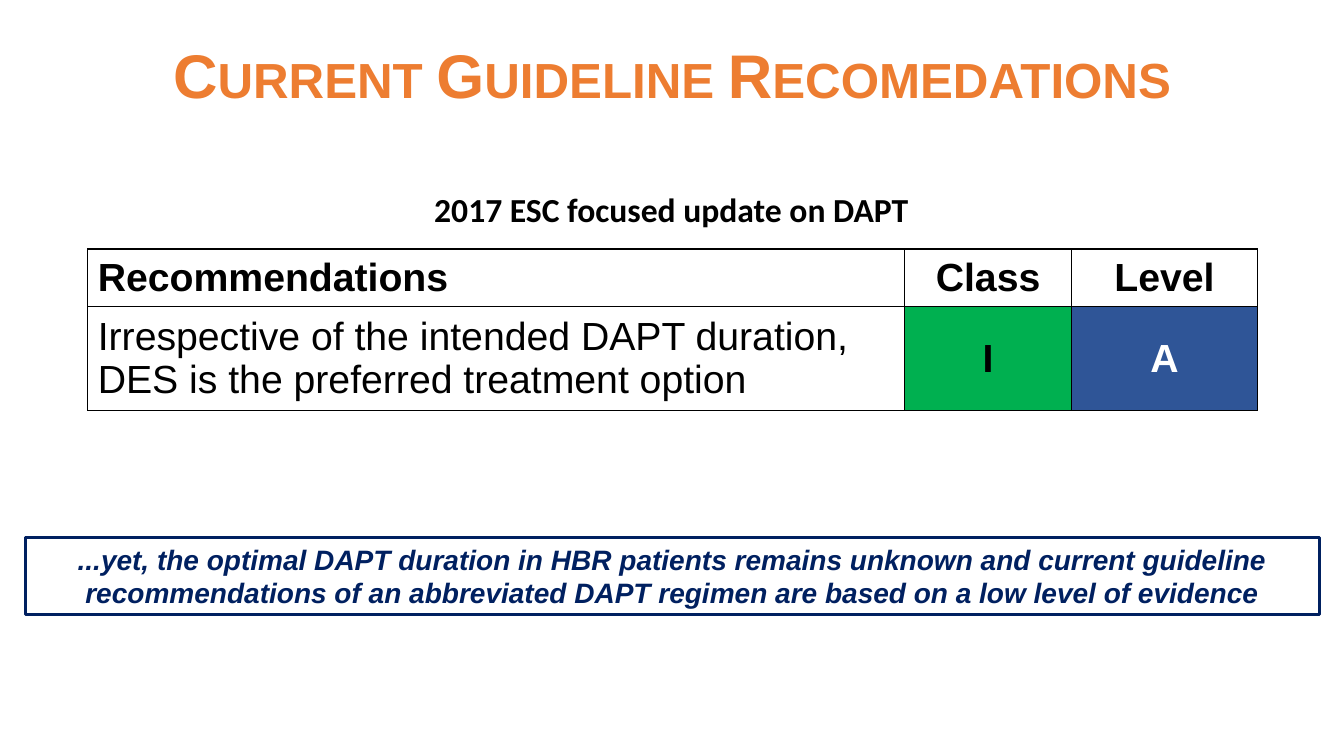
from collections import namedtuple

from lxml.etree import SubElement
from pptx import Presentation
from pptx.dml.color import RGBColor
from pptx.enum.shapes import MSO_SHAPE
from pptx.enum.text import MSO_ANCHOR, PP_ALIGN
from pptx.oxml.ns import qn
from pptx.util import Inches, Pt

WIDTH, HEIGHT = Inches(13.33), Inches(7.5)
BLACK = RGBColor(0x00, 0x00, 0x00)
WHITE = RGBColor(0xFF, 0xFF, 0xFF)
ORANGE = RGBColor(0xED, 0x7D, 0x31)
NAVY = RGBColor(0x00, 0x20, 0x60)
GREEN = RGBColor(0x00, 0xB0, 0x50)
BLUE = RGBColor(0x2F, 0x55, 0x97)

COLUMN_WEIGHTS = (8.1, 1.66, 1.84)
ROW_WEIGHTS = (0.57, 1.03)

Box = namedtuple("Box", "left top width height")
Cell = namedtuple("Cell", "text bold color fill", defaults=(True, BLACK, WHITE))

RECOMMENDATIONS = (
    (Cell("Recommendations"), Cell("Class"), Cell("Level")),
    (
        Cell("Irrespective of the intended DAPT duration, "
             "DES is the preferred treatment option", bold=False),
        Cell("I", fill=GREEN),
        Cell("A", color=WHITE, fill=BLUE),
    ),
)


def percent_box(left, top, width, height):
    """Turn percentages of the slide's width and height into lengths."""
    return Box(int(WIDTH * left / 100), int(HEIGHT * top / 100),
               int(WIDTH * width / 100), int(HEIGHT * height / 100))


def write(frame, text, size, color, font="Arial", bold=True, italic=False,
          align=PP_ALIGN.CENTER):
    frame.word_wrap = True
    para = frame.paragraphs[0]
    para.alignment = align
    span = para.add_run()
    span.text = text
    span.font.name = font
    span.font.size = Pt(size)
    span.font.bold = bold
    span.font.italic = italic
    span.font.color.rgb = color
    return span


def add_title(page, box):
    frame = page.shapes.add_textbox(*box).text_frame
    span = write(frame, "Current Guideline Recomedations", 44, ORANGE)
    span.font._element.set("cap", "small")
    frame.paragraphs[0].line_spacing = 0.9


def add_caption(page, box):
    frame = page.shapes.add_textbox(*box).text_frame
    write(frame, "2017 ESC focused update on DAPT", 24, BLACK, font="Calibri")


def add_borders(cell):
    properties = cell._tc.get_or_add_tcPr()
    for side in ("lnL", "lnR", "lnT", "lnB"):
        line = SubElement(properties, qn(f"a:{side}"), w=str(Pt(1)))
        fill = SubElement(line, qn("a:solidFill"))
        SubElement(fill, qn("a:srgbClr"), val=str(BLACK))


def add_recommendations(page, box):
    table = page.shapes.add_table(
        len(ROW_WEIGHTS), len(COLUMN_WEIGHTS), *box).table
    table.first_row = table.horz_banding = False
    for column, weight in zip(table.columns, COLUMN_WEIGHTS):
        column.width = int(box.width * weight / sum(COLUMN_WEIGHTS))
    for row, weight in zip(table.rows, ROW_WEIGHTS):
        row.height = int(box.height * weight / sum(ROW_WEIGHTS))
    for row, contents in zip(table.rows, RECOMMENDATIONS):
        for index, (cell, content) in enumerate(zip(row.cells, contents)):
            add_borders(cell)
            cell.fill.solid()
            cell.fill.fore_color.rgb = content.fill
            cell.vertical_anchor = MSO_ANCHOR.MIDDLE
            write(cell.text_frame, content.text, 28, content.color,
                  bold=content.bold,
                  align=PP_ALIGN.CENTER if index else PP_ALIGN.LEFT)


def add_conclusion(page, box):
    banner = page.shapes.add_shape(MSO_SHAPE.RECTANGLE, *box)
    banner.shadow.inherit = False
    banner.fill.background()
    banner.line.color.rgb = NAVY
    banner.line.width = Pt(2)
    banner.text_frame.vertical_anchor = MSO_ANCHOR.TOP
    write(banner.text_frame,
          "...yet, the optimal DAPT duration in HBR patients remains unknown "
          "and current guideline recommendations of an abbreviated DAPT "
          "regimen are based on a low level of evidence",
          20, NAVY, italic=True)


def main():
    deck = Presentation()
    deck.slide_width, deck.slide_height = WIDTH, HEIGHT
    page = deck.slides.add_slide(deck.slide_layouts[6])
    add_conclusion(page, percent_box(1.88, 71.07, 96.32, 10.27))
    add_title(page, percent_box(0, 5.33, 100, 19.33))
    add_recommendations(page, percent_box(6.53, 32.93, 87.02, 21.33))
    add_caption(page, percent_box(21, 24.27, 57.91, 6.67))
    deck.save("out.pptx")


if __name__ == "__main__":
    main()
